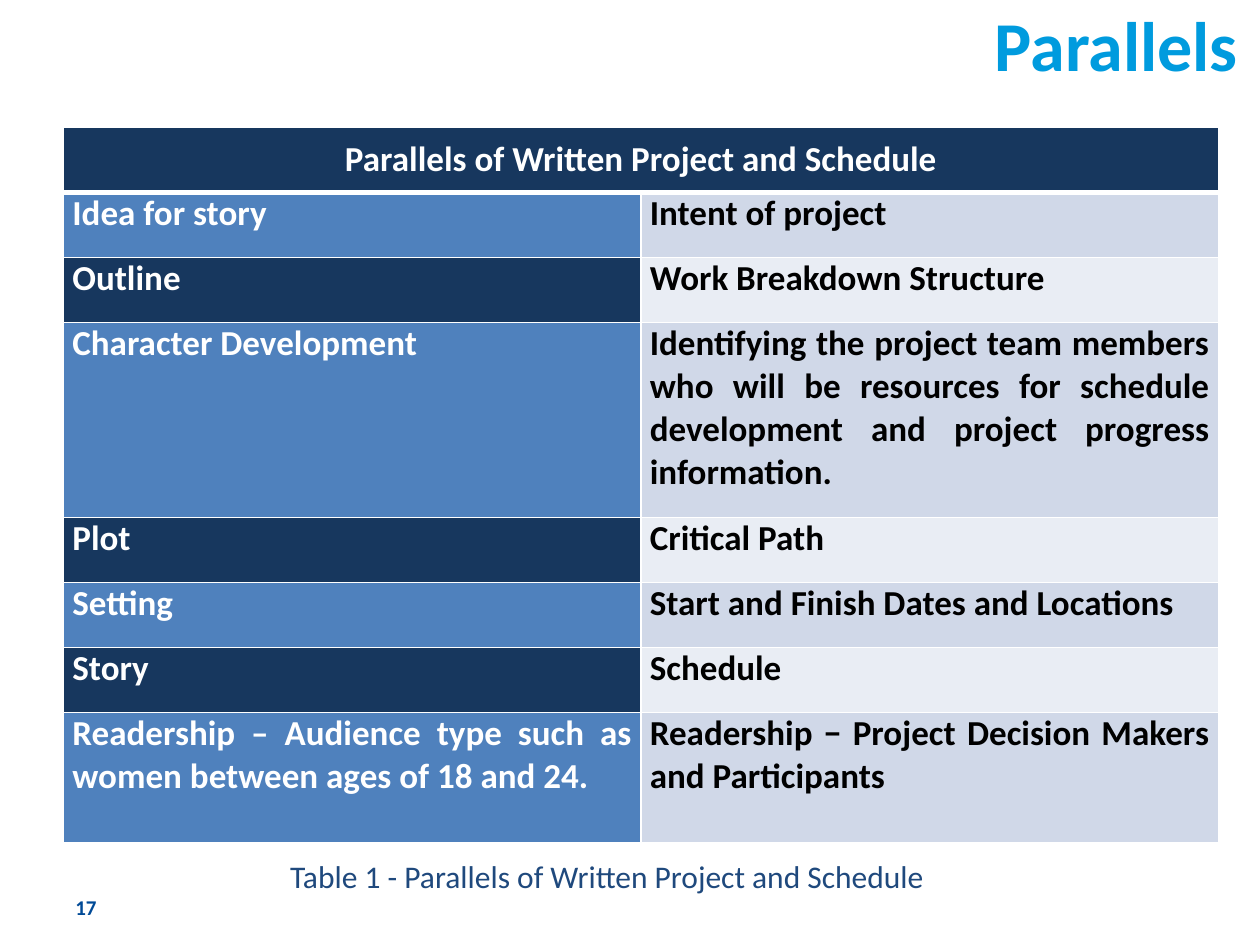
from dataclasses import dataclass

from lxml.etree import SubElement
from pptx import Presentation
from pptx.dml.color import RGBColor as RGB
from pptx.enum.text import MSO_ANCHOR as Anchor, PP_ALIGN as Align
from pptx.oxml.ns import qn
from pptx.util import Cm, Pt


@dataclass(frozen=True)
class Theme:
    font: str = "Calibri"
    title: str = "009BDE"
    number: str = "004A97"
    caption: str = "1F497D"
    white: str = "FFFFFF"
    black: str = "000000"
    navy: str = "17375E"
    left_bands: tuple = ("4F81BD", "17375E")
    right_bands: tuple = ("D0D8E8", "E9EDF4")
    title_size: int = 40
    table_size: int = 20
    caption_size: int = 18
    number_size: int = 12


THEME = Theme()
HEADING = "Parallels of Written Project and Schedule"
PARALLELS = [
    ("Idea for story", "Intent of project"),
    ("Outline", "Work Breakdown Structure"),
    ("Character Development",
     "Identifying the project team members who will be resources for "
     "schedule development and project progress information."),
    ("Plot", "Critical Path"),
    ("Setting", "Start and Finish Dates and Locations"),
    ("Story", "Schedule"),
    ("Readership – Audience type such as women between ages of 18 and 24.",
     "Readership − Project Decision Makers and Participants"),
]
ROW_HEIGHT = 1.31
TALL_ROWS = {3: 3.93, 7: 2.62}


def write(tf, text, size, color, bold=True, align=Align.LEFT, after=0):
    p = tf.paragraphs[0]
    p.alignment = align
    p.space_before = Pt(0)
    p.space_after = Pt(after)
    r = p.add_run()
    r.text = text
    r.font.name = THEME.font
    r.font.size = Pt(size)
    r.font.bold = bold
    r.font.color.rgb = RGB.from_string(color)


def add_text(s, box, text, size, color, anchor=Anchor.MIDDLE, **fmt):
    tf = s.shapes.add_textbox(*map(Cm, box)).text_frame
    tf.word_wrap = True
    tf.vertical_anchor = anchor
    write(tf, text, size, color, **fmt)


def add_borders(cell, top=1, bottom=1):
    tc_pr = cell._tc.get_or_add_tcPr()
    for side, width in (("L", 1), ("R", 1), ("T", top), ("B", bottom)):
        ln = SubElement(tc_pr, qn(f"a:ln{side}"), w=str(Pt(width)))
        SubElement(SubElement(ln, qn("a:solidFill")), qn("a:srgbClr"), val=THEME.white)


def fill_cell(cell, text, fill, color, align=Align.JUSTIFY, anchor=Anchor.TOP, **borders):
    cell.margin_left = cell.margin_right = Cm(0.18)
    cell.margin_top = cell.margin_bottom = 0
    cell.vertical_anchor = anchor
    add_borders(cell, **borders)
    cell.fill.solid()
    cell.fill.fore_color.rgb = RGB.from_string(fill)
    write(cell.text_frame, text, THEME.table_size, color, align=align, after=6)


def add_parallels_table(s):
    heights = [TALL_ROWS.get(i, ROW_HEIGHT) for i in range(len(PARALLELS) + 1)]
    box = (1.28, 2.57, 23.28, sum(heights))
    table = s.shapes.add_table(len(heights), 2, *map(Cm, box)).table
    for row, height in zip(table.rows, heights):
        row.height = Cm(height)

    heading = table.cell(0, 0)
    heading.merge(table.cell(0, 1))
    fill_cell(heading, HEADING, THEME.navy, THEME.white,
              align=Align.CENTER, anchor=Anchor.MIDDLE, bottom=3)
    add_borders(table.cell(0, 1), bottom=3)

    columns = ((THEME.left_bands, THEME.white), (THEME.right_bands, THEME.black))
    for i, pair in enumerate(PARALLELS):
        for j, (bands, color) in enumerate(columns):
            fill_cell(table.cell(i + 1, j), pair[j], bands[i % 2], color,
                      top=1 if i else 3)


def main():
    prs = Presentation()
    prs.slide_width, prs.slide_height = Cm(25.4), Cm(19.05)
    s = prs.slides.add_slide(prs.slide_layouts[6])
    add_text(s, (6.35, -0.23, 18.85, 2.21), "Parallels",
             THEME.title_size, THEME.title, align=Align.RIGHT)
    add_parallels_table(s)
    add_text(s, (5.6, 17.15, 15.6, 1.03), f"Table 1 - {HEADING}",
             THEME.caption_size, THEME.caption, anchor=Anchor.TOP,
             bold=False, align=Align.JUSTIFY, after=10)
    add_text(s, (1.27, 17.78, 5.93, 1.02), "17", THEME.number_size, THEME.number)
    prs.save("out.pptx")


if __name__ == "__main__":
    main()
